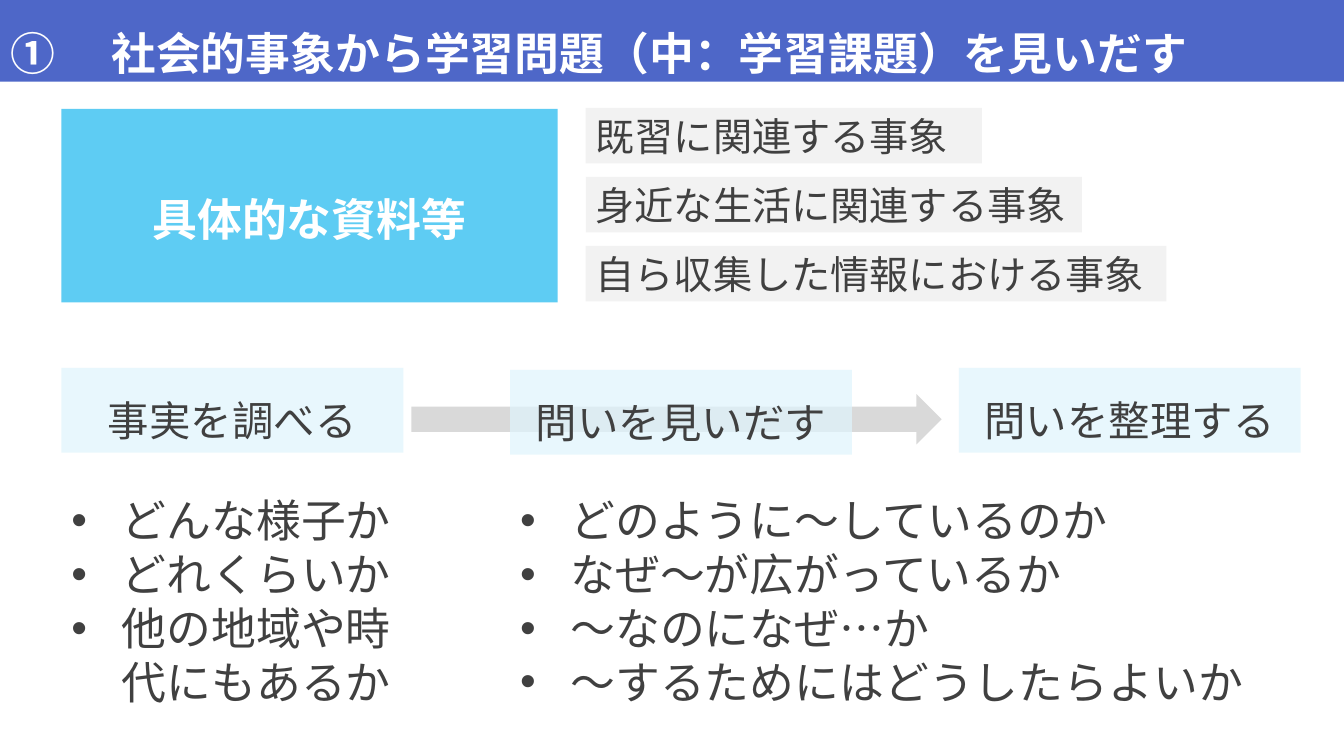
from dataclasses import dataclass

from lxml import etree
from pptx import Presentation
from pptx.dml.color import RGBColor
from pptx.enum.shapes import MSO_SHAPE
from pptx.enum.text import MSO_ANCHOR, MSO_AUTO_SIZE, PP_ALIGN
from pptx.oxml.ns import qn
from pptx.util import Inches, Pt

RECT, ARROW = MSO_SHAPE.RECTANGLE, MSO_SHAPE.RIGHT_ARROW
LEFT, CENTER = PP_ALIGN.LEFT, PP_ALIGN.CENTER
MIDDLE = MSO_ANCHOR.MIDDLE
NO_FIT = MSO_AUTO_SIZE.NONE


@dataclass
class Theme:
    font: str = "Noto Sans CJK JP"
    blue: str = "4E67C8"
    cyan: str = "5ECCF3"
    pale: str = "DFF5FD"
    light: str = "F2F2F2"
    gray: str = "D9D9D9"
    dark: str = "404040"
    white: str = "FFFFFF"
    large: float = 32
    step: float = 29.6
    small: float = 28


theme = Theme()
deck = Presentation()
deck.slide_width, deck.slide_height = Inches(13.33), Inches(7.5)
slide = deck.slides.add_slide(deck.slide_layouts[5])


def add_box(kind, x, y, w, h, color):
    box = slide.shapes.add_shape(kind, Inches(x), Inches(y), Inches(w), Inches(h))
    box.shadow.inherit = False
    box.fill.solid()
    box.fill.fore_color.rgb = RGBColor.from_string(color)
    box.line.fill.background()
    return box


def write(shape, lines, size, color=theme.dark, align=LEFT, space=1.0,
          bold=False, indent=0, bullet=None):
    frame = shape.text_frame
    frame.word_wrap = True
    frame.auto_size = NO_FIT
    frame.vertical_anchor = MIDDLE
    for i, line in enumerate(lines):
        para = frame.paragraphs[0] if i == 0 else frame.add_paragraph()
        para.alignment = align
        para.line_spacing = space
        run = para.add_run()
        run.text = line
        run.font.name = theme.font
        run.font.size = Pt(size)
        run.font.bold = bold
        run.font.color.rgb = RGBColor.from_string(color)
        # East Asian typeface
        etree.SubElement(run.font._element, qn("a:ea"), typeface=theme.font)
        if bullet:
            tag, key, mark = bullet
            props = para._p.get_or_add_pPr()
            props.set("marL", str(Inches(indent)))
            props.set("indent", str(-Inches(indent)))
            if tag == "a:buChar":
                etree.SubElement(props, qn("a:buFont"), typeface="Arial")
            etree.SubElement(props, qn(tag), {key: mark})


# Title band
title = slide.shapes.title
title.left, title.top = Inches(0), Inches(-0.03)
title.width, title.height = Inches(13.33), Inches(0.84)
title.fill.solid()
title.fill.fore_color.rgb = RGBColor.from_string(theme.blue)
write(title, ["\u3000社会的事象から学習問題（中：学習課題）を見いだす".replace("\u3000", "　")],
      theme.large, theme.white, space=1.5, bold=True, indent=0.56,
      bullet=("a:buAutoNum", "type", "circleNumDbPlain"))

# Source material and its three kinds
source = add_box(RECT, 0.61, 1.08, 4.92, 1.92, theme.cyan)
write(source, ["具体的な資料等"], theme.large, theme.white, CENTER, 1.5, True)

kinds = [("既習に関連する事象", 3.93),
         ("身近な生活に関連する事象", 4.92),
         ("自ら収集した情報における事象", 5.76)]
for i, (text, width) in enumerate(kinds):
    label = add_box(RECT, 5.81, 1.07 + i * 1.37 / 2, width, 0.55, theme.light)
    write(label, [text], theme.small)

# Arrow behind the three steps
add_box(ARROW, 4.08, 3.91, 5.26, 0.5, theme.gray)
steps = [("事実を調べる", 3.65), ("問いを見いだす", 3.67), ("問いを整理する", 3.65)]
for i, (text, top) in enumerate(steps):
    step = add_box(RECT, 0.61 + i * 4.45, top, 3.39, 0.84, theme.pale)
    tint = step.fill._xPr.find(qn("a:solidFill"))[0]
    etree.SubElement(tint, qn("a:alpha"), val="70000")
    write(step, [text], theme.step, align=CENTER, space=1.4)

# Question lists
lists = [(0.61, 3.39, ["どんな様子か", "どれくらいか", "他の地域や時代にもあるか"]),
         (5.06, 7.84, ["どのように〜しているのか", "なぜ〜が広がっているか",
                       "〜なのになぜ…か", "〜するためにはどうしたらよいか"])]
for left, width, lines in lists:
    area = slide.shapes.add_textbox(Inches(left), Inches(4.81), Inches(width), Inches(2.3))
    write(area, lines, theme.large, indent=0.5, bullet=("a:buChar", "char", "•"))

deck.save("out.pptx")
